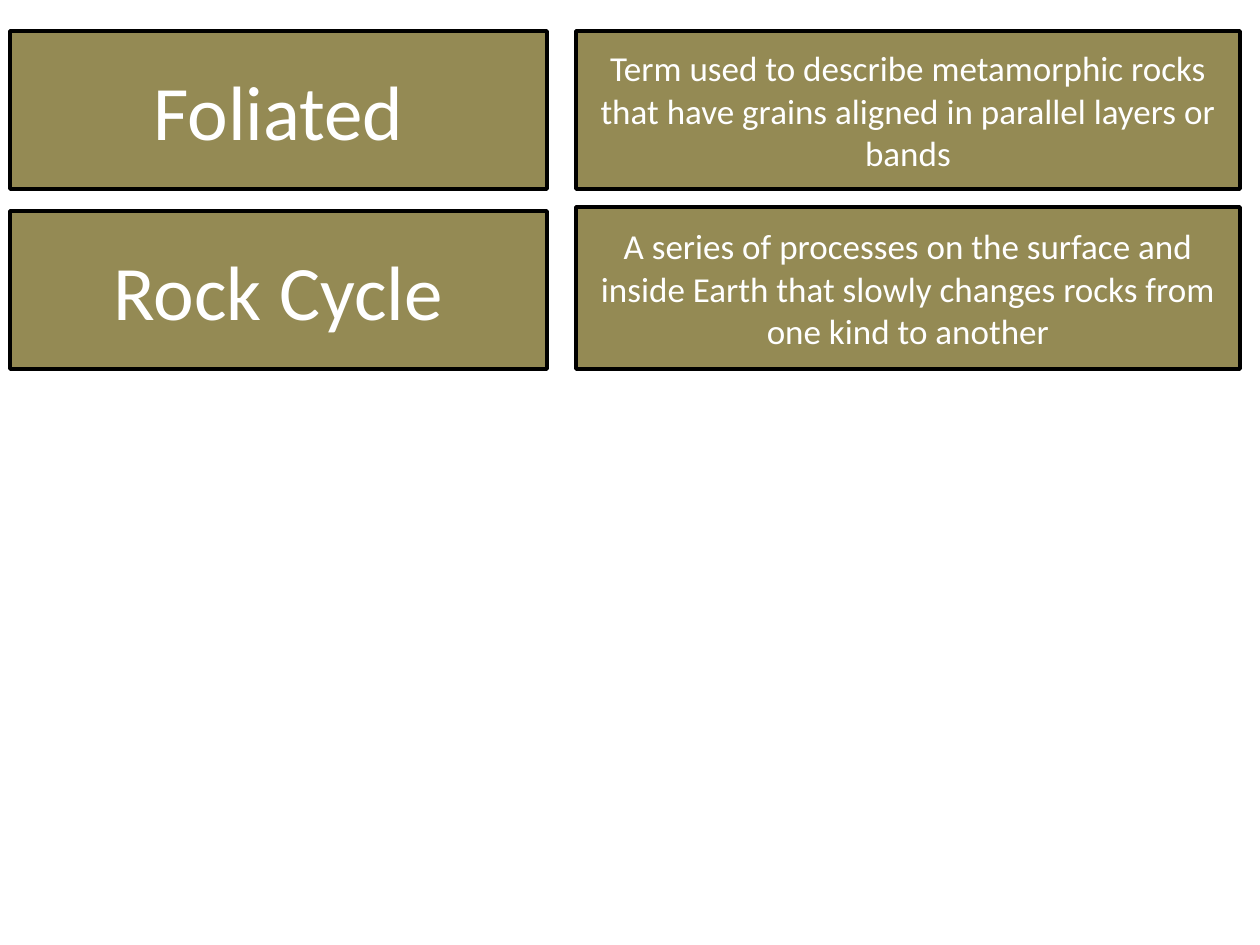
from pptx import Presentation
from pptx.dml.color import RGBColor
from pptx.enum.shapes import MSO_SHAPE as SHAPE
from pptx.enum.text import MSO_ANCHOR as ANCHOR, PP_ALIGN as ALIGN
from pptx.util import Emu, Pt

PX = 914400 // 126  # EMU per px
COLORS = {"box": "948A54", "line": "000000", "text": "FFFFFF"}


class VocabSlide:
    """Holds the style and the current slide."""

    font = "Calibri"
    line_width = 2

    def __init__(self, prs):
        self.slide = prs.slides.add_slide(prs.slide_layouts[6])

    def color(self, name):
        return RGBColor.from_string(COLORS[name])

    def box(self, left, top, width, height, text, size):
        sp = self.slide.shapes.add_shape(
            SHAPE.FLOWCHART_PROCESS,
            *(Emu(v * PX) for v in (left, top, width, height)))
        sp.shadow.inherit = False
        sp.fill.solid()
        sp.fill.fore_color.rgb = self.color("box")
        sp.line.color.rgb = self.color("line")
        sp.line.width = Pt(self.line_width)
        tf = sp.text_frame
        tf.word_wrap = True
        tf.vertical_anchor = ANCHOR.MIDDLE
        p = tf.paragraphs[0]
        p.alignment = ALIGN.CENTER
        r = p.add_run()
        r.text = text
        r.font.name = self.font
        r.font.size = Pt(size)
        r.font.color.rgb = self.color("text")


def main():
    prs = Presentation()
    prs.slide_width, prs.slide_height = Emu(9144000), Emu(6858000)
    s = VocabSlide(prs)

    # Each row: term, definition, and the top and height of both boxes
    rows = [
        ("Foliated", 31, 158,
         "Term used to describe metamorphic rocks that have grains aligned "
         "in parallel layers or bands", 31, 158),
        ("Rock Cycle", 211, 158,
         "A series of processes on the surface and inside Earth that slowly "
         "changes rocks from one kind to another", 207, 162),
    ]
    for term, term_top, term_h, meaning, meaning_top, meaning_h in rows:
        s.box(10, term_top, 537, term_h, term, 44)
        s.box(576, meaning_top, 664, meaning_h, meaning, 20)

    prs.save("out.pptx")


if __name__ == "__main__":
    main()
